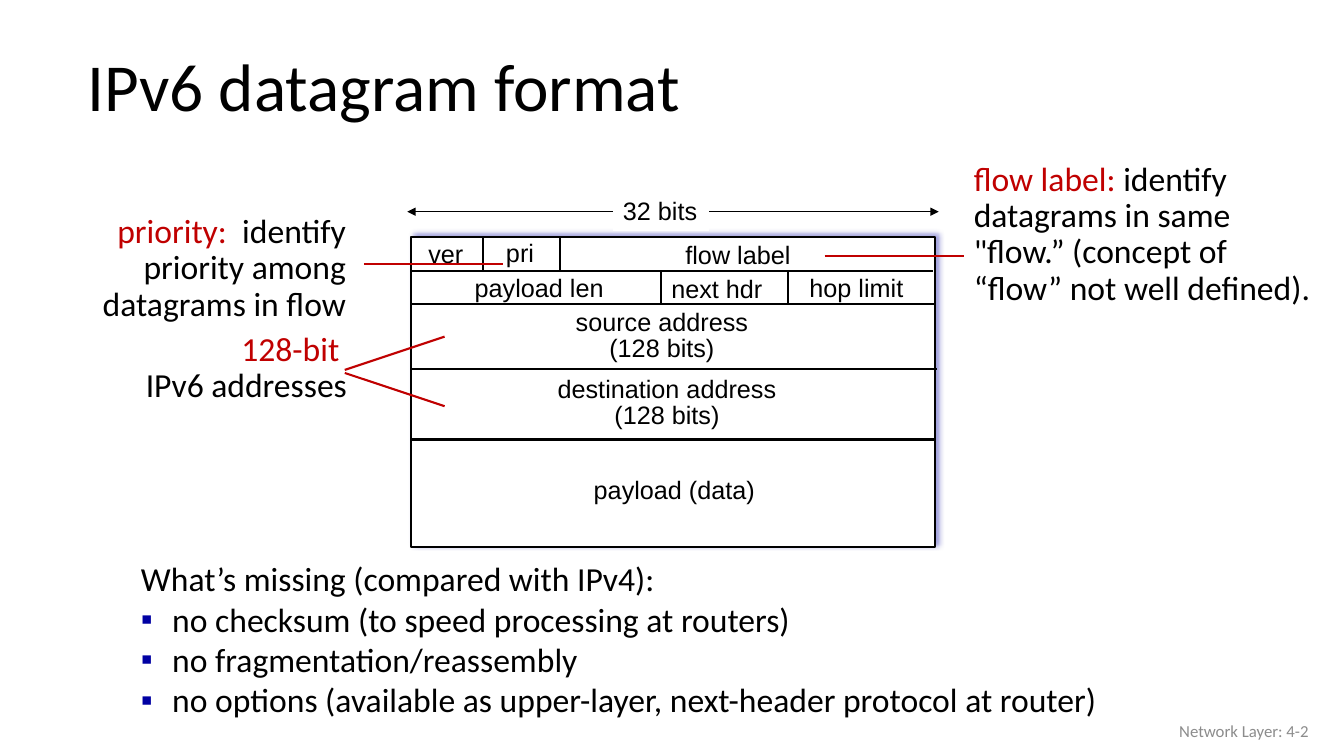
from lxml import etree
from pptx import Presentation
from pptx import util as u
from pptx.dml.color import RGBColor
from pptx.enum import shapes, text
from pptx.oxml.ns import qn

PX = 9144
BLACK, WHITE, RED, BLUE, GRAY = "000000", "FFFFFF", "C00000", "0000A3", "8C8C8C"
LEFT, RIGHT, MID = text.PP_ALIGN.LEFT, text.PP_ALIGN.RIGHT, text.PP_ALIGN.CENTER

TITLE = "IPv6 datagram format"
FRAME = (408, 235, 519, 308)
ROWS = [(408, 925, 269), (407, 928, 302), (409, 929, 366), (407, 928, 436)]
COLS = [(479, 236, 269), (555, 236, 268), (656, 269, 301), (782, 269, 301)]
FIELDS = [
    ("ver", 415, 232, 55, 40),
    ("pri", 492, 231, 48, 40),
    ("flow label", 670, 233, 124, 40),
    ("payload len", 461, 265, 148, 40),
    ("next hdr", 656, 266, 110, 40),
    ("hop limit", 793, 265, 113, 40),
    ("source address\n(128 bits)", 561, 304, 191, 61),
    ("destination address\n(128 bits)", 543, 370, 237, 61),
    ("payload (data)", 579, 466, 181, 40),
]
WIDTH = ("32 bits", 608, 189, 95, 40)
SPAN = (404, 210, 931, 210)
NOTES = [
    ([("priority:  ", "identify priority among datagrams in flow")],
     (47, 208, 306, 119), RIGHT),
    ([("flow label: ", "identify datagrams in same \"flow.” "
       "(concept of “flow” not well defined).")],
     (956, 156, 354, 156), LEFT),
    ([("128-bit ", ""), ("", "IPv6 addresses")], (0, 325, 354, 83), RIGHT),
]
LEADS = [(361, 262, 499, 262), (818, 254, 956, 254),
         (342, 370, 441, 403), (342, 367, 441, 334)]
MISSING = [
    "What’s missing (compared with IPv4):",
    "no checksum (to speed processing at routers)",
    "no fragmentation/reassembly",
    "no options (available as upper-layer, next-header protocol at router)",
]
MISS_BOX = (130, 549, 981, 172)
INDENT = 31
FOOT, FOOT_BOX = "Network Layer: 4-2", (1008, 705, 300, 40)


def color(code):
    return RGBColor.from_string(code)


def emu(box):
    return [v * PX for v in box]


def style(run, size, font, code):
    run.font.size = u.Pt(size)
    run.font.name = font
    run.font.color.rgb = color(code)


def format_all(frame, size, font, code, align=LEFT, gap=None):
    for para in frame.paragraphs:
        para.alignment = align
        para.line_spacing = gap
        for run in para.runs:
            style(run, size, font, code)


def add_box(slide, box, wrap=True):
    shape = slide.shapes.add_textbox(*emu(box))
    shape.text_frame.word_wrap = wrap
    shape.text_frame.auto_size = text.MSO_AUTO_SIZE.SHAPE_TO_FIT_TEXT
    return shape


def add_line(slide, ends, code=BLACK, width=1.5, arrows=False):
    line = slide.shapes.add_connector(shapes.MSO_CONNECTOR.STRAIGHT, *emu(ends))
    line.line.color.rgb = color(code)
    line.line.width = u.Pt(width)
    props = line._element.spPr
    if arrows:
        for tag in ("a:headEnd", "a:tailEnd"):
            etree.SubElement(props.find(qn("a:ln")), qn(tag), type="triangle")
    etree.SubElement(props, qn("a:effectLst"))


def add_frame(slide):
    shape = slide.shapes.add_shape(shapes.MSO_SHAPE.RECTANGLE, *emu(FRAME))
    shape.fill.solid()
    shape.fill.fore_color.rgb = color(WHITE)
    shape.line.color.rgb = color(BLACK)
    shape.line.width = u.Pt(1.5)
    shape.shadow.inherit = False
    glow = etree.SubElement(
        shape._element.spPr.find(qn("a:effectLst")), qn("a:outerShdw"),
        blurRad=str(u.Pt(4)), dist=str(u.Pt(3)), dir=str(315 * 60000),
        algn="bl", rotWithShape="0")
    tint = etree.SubElement(glow, qn("a:srgbClr"), val=BLUE)
    etree.SubElement(tint, qn("a:alpha"), val="40000")


def add_field(slide, label, *box):
    shape = add_box(slide, box, wrap=False)
    shape.text_frame.text = label
    pair = "\n" in label
    format_all(shape.text_frame, 18, "Arial", BLACK,
               MID if pair else LEFT, 0.85 if pair else None)
    return shape


def add_note(slide, lines, box, align):
    frame = add_box(slide, box).text_frame
    for i, parts in enumerate(lines):
        para = frame.add_paragraph() if i else frame.paragraphs[0]
        para.alignment, para.line_spacing = align, 0.9
        for words, code in zip(parts, (RED, BLACK)):
            if words:
                run = para.add_run()
                run.text = words
                style(run, 24, "Calibri", code)


def add_bullet(para):
    props = para._p.get_or_add_pPr()
    props.set("marL", str(INDENT * PX))
    props.set("indent", str(-INDENT * PX))
    tint = etree.SubElement(props, qn("a:buClr"))
    etree.SubElement(tint, qn("a:srgbClr"), val=BLUE)
    etree.SubElement(props, qn("a:buFont"), typeface="Arial")
    etree.SubElement(props, qn("a:buChar"), char="▪")


def main():
    deck = Presentation()
    deck.slide_width, deck.slide_height = emu((1333, 750))
    slide = deck.slides.add_slide(deck.slide_layouts[5])

    title = slide.shapes.title
    title.left, title.top, title.width, title.height = emu((77, 31, 1150, 117))
    title.text_frame.text = TITLE
    title.text_frame.vertical_anchor = text.MSO_ANCHOR.MIDDLE
    format_all(title.text_frame, 48, "Calibri", BLACK, LEFT, 0.9)

    add_frame(slide)
    for x1, x2, y in ROWS:
        add_line(slide, (x1, y, x2, y))
    for x, y1, y2 in COLS:
        add_line(slide, (x, y1, x, y2))
    for field in FIELDS:
        add_field(slide, *field)

    add_line(slide, SPAN, width=0.75, arrows=True)
    width = add_field(slide, *WIDTH)
    width.fill.solid()
    width.fill.fore_color.rgb = color(WHITE)

    for note in NOTES:
        add_note(slide, *note)
    for ends in LEADS:
        add_line(slide, ends, RED)

    frame = add_box(slide, MISS_BOX).text_frame
    frame.text = "\n".join(MISSING)
    format_all(frame, 24, "Calibri", BLACK)
    for para in frame.paragraphs[1:]:
        add_bullet(para)

    foot = add_box(slide, FOOT_BOX).text_frame
    foot.auto_size = text.MSO_AUTO_SIZE.NONE
    foot.vertical_anchor = text.MSO_ANCHOR.MIDDLE
    foot.text = FOOT
    format_all(foot, 12, "Calibri", GRAY, RIGHT)

    deck.save("out.pptx")


if __name__ == "__main__":
    main()
